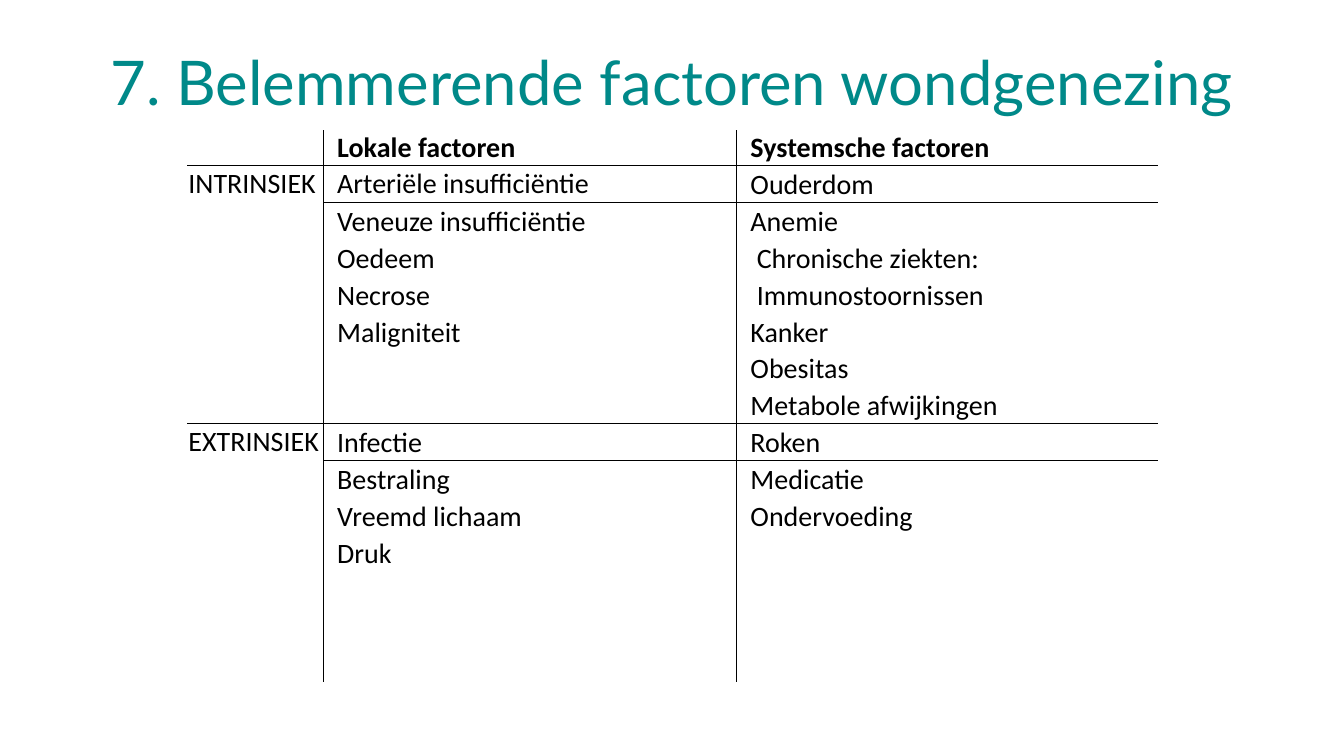
from lxml.etree import SubElement
from pptx import Presentation
from pptx.dml.color import RGBColor
from pptx.enum.text import MSO_ANCHOR, MSO_AUTO_SIZE, PP_ALIGN
from pptx.oxml.ns import qn
from pptx.util import Pt

COLOURS = {"title": "008989", "text": "000000", "rule": "000000"}
FONTS = {
    "title": {"name": "Lato", "size": Pt(44), "bold": False},
    "header": {"name": "Calibri", "size": Pt(20), "bold": True},
    "factor": {"name": "Calibri", "size": Pt(20), "bold": False},
}
CELL_MARGINS = {
    "margin_left": Pt(0.72),
    "margin_right": Pt(0.72),
    "margin_top": Pt(0.72),
    "margin_bottom": Pt(0),
}
NO_STYLE = "{2D5ABB26-0587-4C30-8999-92F81FD0307C}"
INDENT, DEEP_INDENT = 9.04, 13.56
COLUMN_WIDTHS = [97.2, 295.2, 300.6]
HEADER_HEIGHT, FACTOR_HEIGHT, GROUP_ROWS = 23, 26.35, 7
COLUMN_RULES = {0: 0.5, 1: 1}
ROW_RULES = {0: 1, GROUP_ROWS: 1}

HEADERS = ["Lokale factoren", "Systemsche factoren"]
GROUPS = {
    "INTRINSIEK": [
        ["Arteriële insufficiëntie", "Veneuze insufficiëntie", "Oedeem", "Necrose", "Maligniteit"],
        ["Ouderdom", "Anemie", "Chronische ziekten:", "Immunostoornissen", "Kanker",
         "Obesitas", "Metabole afwijkingen"],
    ],
    "EXTRINSIEK": [
        ["Infectie", "Bestraling", "Vreemd lichaam", "Druk"],
        ["Roken", "Medicatie", "Ondervoeding"],
    ],
}
DEEP_FACTORS = {"Chronische ziekten:", "Immunostoornissen"}


def apply(target, values):
    for attribute, value in values.items():
        setattr(target, attribute, value)


class FactorSlide:
    def __init__(self, slide):
        self.slide = slide

    def style(self, font, role, colour):
        apply(font, FONTS[role])
        font.color.rgb = RGBColor.from_string(COLOURS[colour])

    def title(self, wording, left, top, width, height):
        heading = self.slide.shapes.title
        apply(heading, {"left": Pt(left), "top": Pt(top), "width": Pt(width), "height": Pt(height)})
        apply(heading.text_frame, {"text": wording, "word_wrap": True,
                                   "auto_size": MSO_AUTO_SIZE.NONE,
                                   "vertical_anchor": MSO_ANCHOR.MIDDLE})
        paragraph = heading.text_frame.paragraphs[0]
        apply(paragraph, {"alignment": PP_ALIGN.CENTER, "line_spacing": 0.9})
        self.style(paragraph.runs[0].font, "title", "title")

    def table(self, left, top, widths, heights):
        frame = self.slide.shapes.add_table(
            len(heights), len(widths), Pt(left), Pt(top), Pt(sum(widths)), Pt(sum(heights)))
        grid = frame.table
        apply(grid, {"first_row": False, "horz_banding": False})
        next(frame._element.iter(qn("a:tableStyleId"))).text = NO_STYLE
        for column, width in zip(grid.columns, widths):
            column.width = Pt(width)
        for row, height in zip(grid.rows, heights):
            row.height = Pt(height)
        for row in range(len(heights)):
            for column in range(len(widths)):
                self.blank(grid.cell(row, column), {
                    "lnL": COLUMN_RULES.get(column - 1),
                    "lnR": COLUMN_RULES.get(column),
                    "lnT": ROW_RULES.get(row - 1),
                    "lnB": ROW_RULES.get(row),
                })
        return grid

    def blank(self, cell, rules):
        apply(cell, CELL_MARGINS)
        properties = cell._tc.get_or_add_tcPr()
        for side, weight in rules.items():
            if weight:
                rule = SubElement(properties, qn(f"a:{side}"), w=str(Pt(weight)))
                fill = SubElement(rule, qn("a:solidFill"))
                SubElement(fill, qn("a:srgbClr"), val=COLOURS["rule"])
        cell.fill.background()

    def entry(self, cell, wording, role="factor", indent=INDENT, anchor=MSO_ANCHOR.BOTTOM):
        apply(cell, {"text": wording, "vertical_anchor": anchor,
                     "margin_left": CELL_MARGINS["margin_left"] + Pt(indent)})
        self.style(cell.text_frame.paragraphs[0].runs[0].font, role, "text")


def main():
    presentation = Presentation()
    apply(presentation, {"slide_width": Pt(960), "slide_height": Pt(540)})
    page = FactorSlide(presentation.slides.add_slide(presentation.slide_layouts[5]))
    page.title("7. Belemmerende factoren wondgenezing", 66, 28.8, 828, 64)

    heights = [HEADER_HEIGHT] + [FACTOR_HEIGHT] * GROUP_ROWS * len(GROUPS)
    grid = page.table(133.9, 92.9, COLUMN_WIDTHS, heights)
    for column, header in enumerate(HEADERS, 1):
        page.entry(grid.cell(0, column), header, "header")
    for position, (group, factor_lists) in enumerate(GROUPS.items()):
        first = 1 + position * GROUP_ROWS
        label = grid.cell(first, 0)
        label.merge(grid.cell(first + GROUP_ROWS - 1, 0))
        page.entry(label, group, indent=0, anchor=MSO_ANCHOR.TOP)
        for column, factors in enumerate(factor_lists, 1):
            for row, factor in enumerate(factors, first):
                indent = DEEP_INDENT if factor in DEEP_FACTORS else INDENT
                anchor = MSO_ANCHOR.MIDDLE if row == column == 1 else MSO_ANCHOR.BOTTOM
                page.entry(grid.cell(row, column), factor, indent=indent, anchor=anchor)
    presentation.save("out.pptx")


if __name__ == "__main__":
    main()
